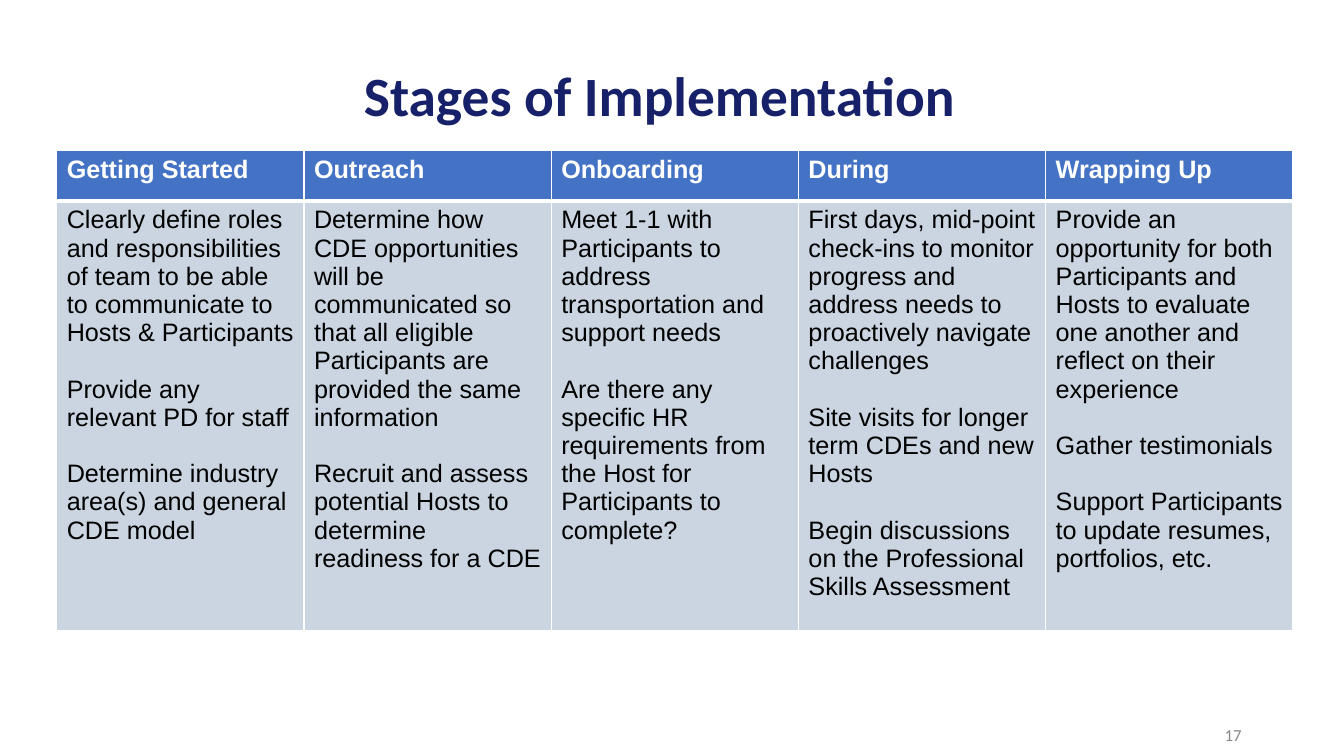
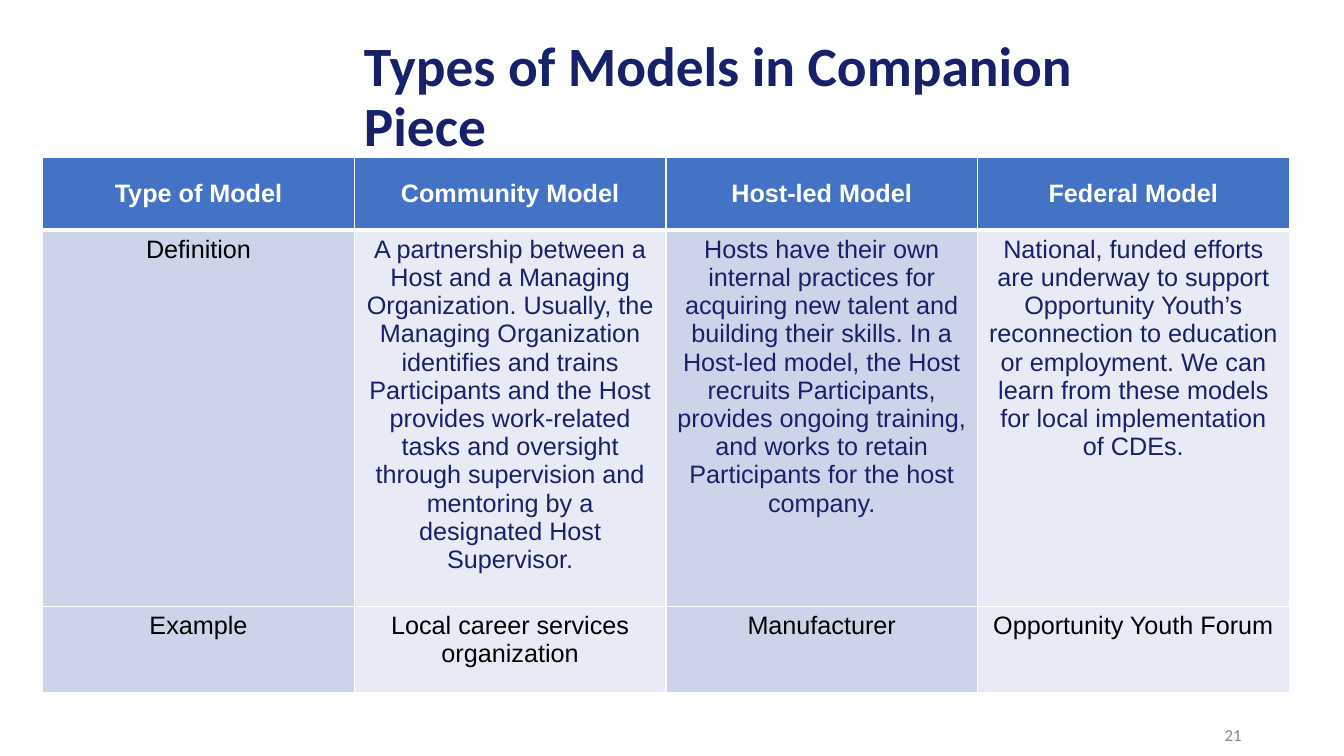
from lxml import etree
from pptx import Presentation
from pptx.dml.color import RGBColor
from pptx.enum import text
from pptx.oxml.ns import qn
from pptx.util import Pt

COLORS = {
    "navy": "172169", "blue": "4472C4", "white": "FFFFFF", "black": "000000",
    "gray": "888888", "steel": "CAD5E1", "lavender": "CDD4EA", "pale": "E8EBF5",
}
PARAGRAPH_GAP = 20.1

STAGES = {
    "Getting Started": [
        "Clearly define roles and responsibilities of team to be able to communicate to Hosts & Participants",
        "Provide any relevant PD for staff",
        "Determine industry area(s) and general CDE model",
    ],
    "Outreach": [
        "Determine how CDE opportunities will be communicated so that all eligible Participants "
        "are provided the same information",
        "Recruit and assess potential Hosts to determine readiness for a CDE",
    ],
    "Onboarding": [
        "Meet 1-1 with Participants to address transportation and support needs",
        "Are there any specific HR requirements from the Host for Participants to complete?",
    ],
    "During": [
        "First days, mid-point check-ins to monitor progress and address needs to proactively navigate challenges",
        "Site visits for longer term CDEs and new Hosts",
        "Begin discussions on the Professional Skills Assessment",
    ],
    "Wrapping Up": [
        "Provide an opportunity for both Participants and Hosts to evaluate one another "
        "and reflect on their experience",
        "Gather testimonials",
        "Support Participants to update resumes, portfolios, etc.",
    ],
}

MODELS = {
    "Type of Model": ("Definition", "Example"),
    "Community Model": (
        "A partnership between a Host and a Managing Organization. Usually, the Managing Organization "
        "identifies and trains Participants and the Host provides work-related tasks and oversight "
        "through supervision and mentoring by a designated Host Supervisor.",
        "Local career services organization",
    ),
    "Host-led Model": (
        "Hosts have their own internal practices for acquiring new talent and building their skills. "
        "In a Host-led model, the Host recruits Participants, provides ongoing training, and works "
        "to retain Participants for the host company.",
        "Manufacturer",
    ),
    "Federal Model": (
        "National, funded efforts are underway to support Opportunity Youth’s reconnection to education "
        "or employment. We can learn from these models for local implementation of CDEs.",
        "Opportunity Youth Forum",
    ),
}


def color(name):
    """Return the named palette colour."""
    return RGBColor.from_string(COLORS[name])


def add_run(paragraph, words, size, font, tint, bold=False):
    """Append one formatted run to a paragraph."""
    run = paragraph.add_run()
    run.text = words
    run.font.size, run.font.name, run.font.bold = Pt(size), font, bold
    run.font.color.rgb = color(tint)


def add_slide(deck, title, number):
    """Add a slide with its title and page number."""
    slide = deck.slides.add_slide(deck.slide_layouts[5])
    heading = slide.shapes.title
    heading.left, heading.top, heading.width, heading.height = Pt(252.7), Pt(48.2), Pt(600), Pt(44)
    heading.text_frame.auto_size = text.MSO_AUTO_SIZE.NONE
    heading.text_frame.vertical_anchor = text.MSO_ANCHOR.MIDDLE
    line = heading.text_frame.paragraphs[0]
    line.alignment, line.line_spacing = text.PP_ALIGN.LEFT, 0.9
    add_run(line, title, 39.6, "Calibri", "navy", True)

    page = slide.shapes.add_textbox(Pt(678), Pt(510.5), Pt(216), Pt(28.8)).text_frame
    page.word_wrap = True
    page.vertical_anchor = text.MSO_ANCHOR.MIDDLE
    page.paragraphs[0].alignment = text.PP_ALIGN.RIGHT
    add_run(page.paragraphs[0], number, 12, "Calibri", "gray")
    return slide


def set_borders(cell, top, bottom):
    """Draw white cell borders, with given top and bottom widths."""
    properties = cell._tc.get_or_add_tcPr()
    for side, width in zip("LRTB", (1, 1, top, bottom)):
        border = etree.SubElement(properties, qn(f"a:ln{side}"), w=str(Pt(width)))
        fill = etree.SubElement(border, qn("a:solidFill"))
        etree.SubElement(fill, qn("a:srgbClr"), val=COLORS["white"])


def fill_cell(cell, paragraphs, fill, tint, align, bold=False, top=1, bottom=1):
    """Write, fill and frame one table cell."""
    set_borders(cell, top, bottom)
    cell.fill.solid()
    cell.fill.fore_color.rgb = color(fill)
    frame = cell.text_frame
    for index, words in enumerate(paragraphs):
        paragraph = frame.add_paragraph() if index else frame.paragraphs[0]
        paragraph.alignment = align
        if index:
            paragraph.space_before = Pt(PARAGRAPH_GAP)
        add_run(paragraph, words, 18, "Arial", tint, bold)


def add_grid(slide, left, top, column_width, row_heights, headers, align):
    """Add a table with equal columns and a blue header row."""
    grid = slide.shapes.add_table(
        len(row_heights), len(headers), Pt(left), Pt(top),
        Pt(column_width * len(headers)), Pt(sum(row_heights))).table
    for column in grid.columns:
        column.width = Pt(column_width)
    for row, height in zip(grid.rows, row_heights):
        row.height = Pt(height)
    for cell, header in zip(grid.rows[0].cells, headers):
        fill_cell(cell, [header], "blue", "white", align, bold=True, bottom=3)
    return grid


def add_stages(deck):
    """Build the slide of implementation stages."""
    slide = add_slide(deck, "Stages of Implementation", "17")
    left = text.PP_ALIGN.LEFT
    grid = add_grid(slide, 40.5, 107.5, 176.6, (36, 288), STAGES, left)
    for cell, steps in zip(grid.rows[1].cells, STAGES.values()):
        fill_cell(cell, steps, "steel", "black", left, top=3)


def add_models(deck):
    """Build the slide that compares the model types."""
    slide = add_slide(deck, "Types of Models in Companion Piece", "21")
    center = text.PP_ALIGN.CENTER
    grid = add_grid(slide, 30.5, 112.5, 222.6, (52, 268.5, 62), MODELS, center)
    for cell in grid.rows[0].cells:
        cell.vertical_anchor = text.MSO_ANCHOR.MIDDLE
    for column, (definition, example) in enumerate(MODELS.values()):
        fill = "pale" if column % 2 else "lavender"
        tint = "navy" if column else "black"
        fill_cell(grid.cell(1, column), [definition], fill, tint, center, top=3)
        fill_cell(grid.cell(2, column), [example], fill, "black", center)


def main():
    """Build and save the deck."""
    deck = Presentation()
    deck.slide_width, deck.slide_height = Pt(960), Pt(540)
    add_stages(deck)
    add_models(deck)
    deck.save("out.pptx")


if __name__ == "__main__":
    main()
